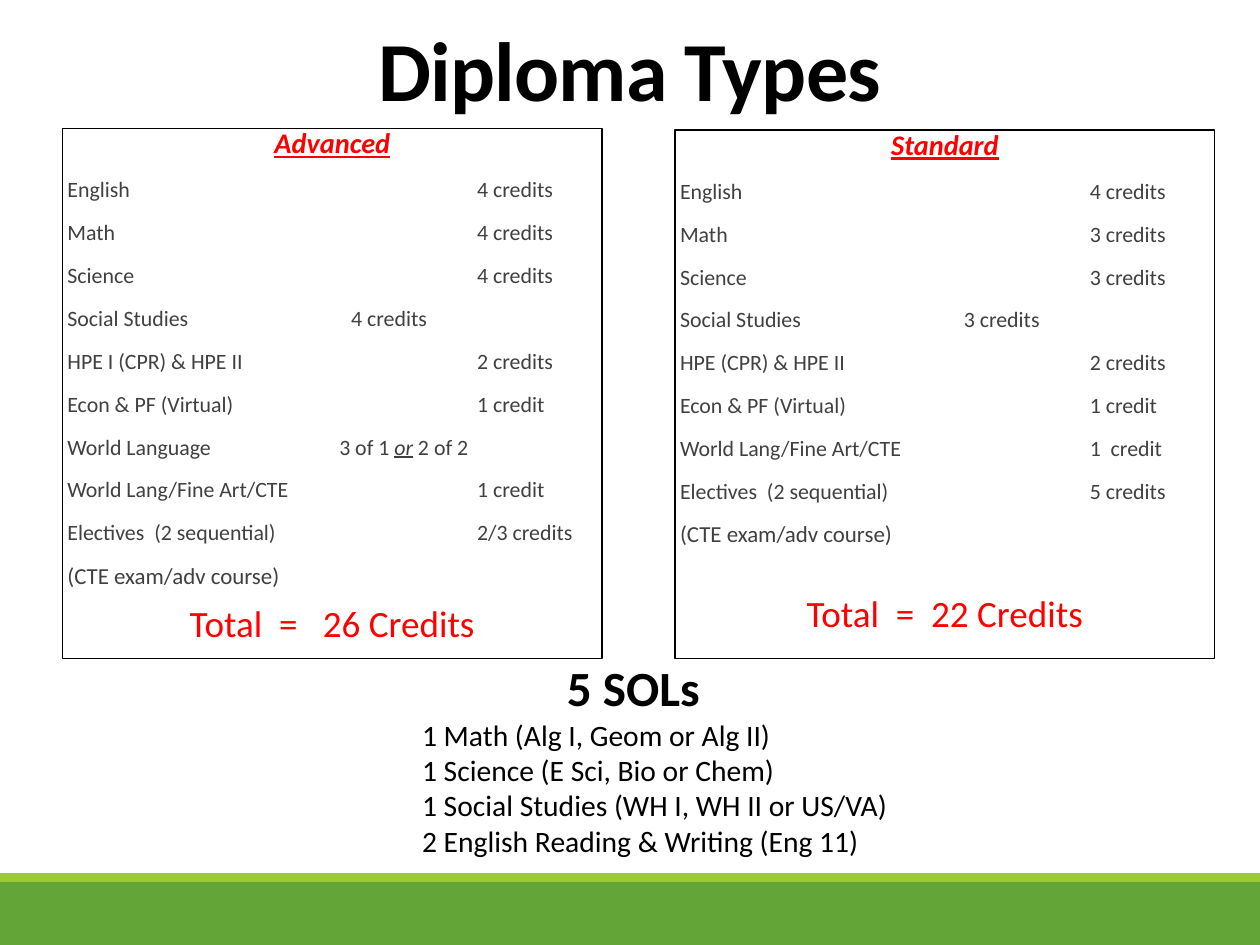
import pptx
import pptx.dml.color
import pptx.enum.shapes
import pptx.enum.text
import pptx.oxml.ns
import pptx.util
from lxml import etree

Cm, Pt = pptx.util.Cm, pptx.util.Pt
ALIGN = pptx.enum.text.PP_ALIGN
ANCHOR = pptx.enum.text.MSO_ANCHOR

THEME = {
    "font": "Calibri",
    "black": "000000", "red": "FF0000", "grey": "404040",
    "green": "63A537", "lime": "99CB38",
    "title": 48, "heading": 16.2, "row": 12.5, "note": 13.1,
    "total": 21.2, "tests_heading": 28.1, "tests": 16.9,
}

TITLE = "Diploma Types"
FAR, MIDDLE, NEAR = 8.26, 5.72, 5.48  # tab positions of the credits, in cm
NOTE = "(CTE exam/adv course)"
DIPLOMAS = [
    {"name": "Advanced", "total": "Total  =   26 Credits", "total_gap": 12,
     "top": 2.59, "height": 10.69,
     "rows": [
         ("English", "4 credits", FAR),
         ("Math", "4 credits", FAR),
         ("Science", "4 credits", FAR),
         ("Social Studies", "4 credits", MIDDLE),
         ("HPE I (CPR) & HPE II", "2 credits", FAR),
         ("Econ & PF (Virtual)", "1 credit", FAR),
         ("World Language", "3 of 1 |or| 2 of 2", NEAR),
         ("World Lang/Fine Art/CTE", "1 credit", FAR),
         ("Electives  (2 sequential)", "2/3 credits", FAR),
     ]},
    {"name": "Standard", "total": "Total  =  22 Credits", "total_gap": 30,
     "top": 2.62, "height": 10.66,
     "rows": [
         ("English", "4 credits", FAR),
         ("Math", "3 credits", FAR),
         ("Science", "3 credits", FAR),
         ("Social Studies", "3 credits", MIDDLE),
         ("HPE (CPR) & HPE II", "2 credits", FAR),
         ("Econ & PF (Virtual)", "1 credit", FAR),
         ("World Lang/Fine Art/CTE", "1  credit", FAR),
         ("Electives  (2 sequential)", "5 credits", FAR),
     ]},
]
TESTS_HEADING = "5 SOLs"
TESTS = [
    "1 Math (Alg I, Geom or Alg II)",
    "1 Science (E Sci, Bio or Chem)",
    "1 Social Studies (WH I, WH II or US/VA)",
    "2 English Reading & Writing (Eng 11)",
]
PANEL_LEFT, PANEL_STEP, PANEL_WIDTH = 1.26, 12.35, 10.88


def color(name):
    return pptx.dml.color.RGBColor.from_string(THEME[name])


def set_attributes(target, values):
    for name, value in values.items():
        setattr(target, name, value)


def add_rectangle(slide, box, fill=None, line=None):
    shape = slide.shapes.add_shape(
        pptx.enum.shapes.MSO_SHAPE.RECTANGLE, *map(Cm, box))
    shape.shadow.inherit = False
    if fill:
        shape.fill.solid()
        shape.fill.fore_color.rgb = color(fill)
    else:
        shape.fill.background()
    if line:
        shape.line.color.rgb = color(line)
        shape.line.width = Pt(0.75)
    else:
        shape.line.fill.background()
    return shape


def add_run(paragraph, text, size, ink="black", **style):
    run = paragraph.add_run()
    run.text = text
    run.font.color.rgb = color(ink)
    set_attributes(run.font, {"name": THEME["font"], "size": Pt(THEME[size]), **style})
    return run


def next_paragraph(frame, **layout):
    """Return the still empty first paragraph, or a new one after the last."""
    first = frame.paragraphs[0]
    paragraph = frame.add_paragraph() if first.runs else first
    set_attributes(paragraph, {"alignment": ALIGN.LEFT, **layout})
    return paragraph


def add_tab_stop(paragraph, position):
    qualified = pptx.oxml.ns.qn
    properties = paragraph._p.get_or_add_pPr()
    tabs = etree.SubElement(properties, qualified("a:tabLst"))
    etree.SubElement(tabs, qualified("a:tab"), pos=str(Cm(position)), algn="l")


def add_diploma(slide, diploma, left):
    panel = add_rectangle(
        slide, (left, diploma["top"], PANEL_WIDTH, diploma["height"]), line="black")
    frame = panel.text_frame
    set_attributes(frame, {
        "word_wrap": True, "vertical_anchor": ANCHOR.TOP,
        "margin_left": Cm(0.1), "margin_right": Cm(0.1),
        "margin_top": Cm(0.13), "margin_bottom": Cm(0.13)})
    spacing = {"line_spacing": 0.7, "space_before": Pt(12), "space_after": Pt(2)}
    centred = {**spacing, "alignment": ALIGN.CENTER}

    add_run(next_paragraph(frame, **centred), diploma["name"], "heading", "red",
            bold=True, italic=True, underline=True)
    for subject, credits, position in diploma["rows"]:
        paragraph = next_paragraph(frame, **spacing)
        add_tab_stop(paragraph, position)
        for index, part in enumerate(f"{subject}\t{credits}".split("|")):
            emphasis = index % 2 == 1
            add_run(paragraph, part, "row", "grey", italic=emphasis, underline=emphasis)
    add_run(next_paragraph(frame, **spacing), NOTE, "note", "grey")
    centred["space_before"] = Pt(diploma["total_gap"])
    add_run(next_paragraph(frame, **centred), diploma["total"], "total", "red")


def add_text_frame(slide, box, anchor):
    frame = slide.shapes.add_textbox(*map(Cm, box)).text_frame
    set_attributes(frame, {"word_wrap": True, "vertical_anchor": anchor})
    return frame


def main():
    presentation = pptx.Presentation()
    set_attributes(presentation, {"slide_width": Cm(25.4), "slide_height": Cm(19.05)})
    slide = presentation.slides.add_slide(presentation.slide_layouts[6])

    add_rectangle(slide, (0, 17.78, 25.4, 1.27), fill="green")
    add_rectangle(slide, (0, 17.6, 25.4, 0.18), fill="lime")

    title = add_text_frame(slide, (1.27, 0.51, 22.86, 2), ANCHOR.BOTTOM)
    paragraph = next_paragraph(title, alignment=ALIGN.CENTER, line_spacing=0.85)
    run = add_run(paragraph, TITLE, "title", bold=True)
    run.font._element.set("spc", "-50")

    for index, diploma in enumerate(DIPLOMAS):
        add_diploma(slide, diploma, PANEL_LEFT + index * PANEL_STEP)

    tests = add_text_frame(slide, (8.26, 13.13, 9.93, 4.34), ANCHOR.TOP)
    heading = next_paragraph(tests)
    heading._p.get_or_add_pPr().set("marL", str(Cm(2.92)))
    add_run(heading, TESTS_HEADING, "tests_heading", bold=True)
    for test in TESTS:
        add_run(next_paragraph(tests), test, "tests")

    presentation.save("out.pptx")


if __name__ == "__main__":
    main()
